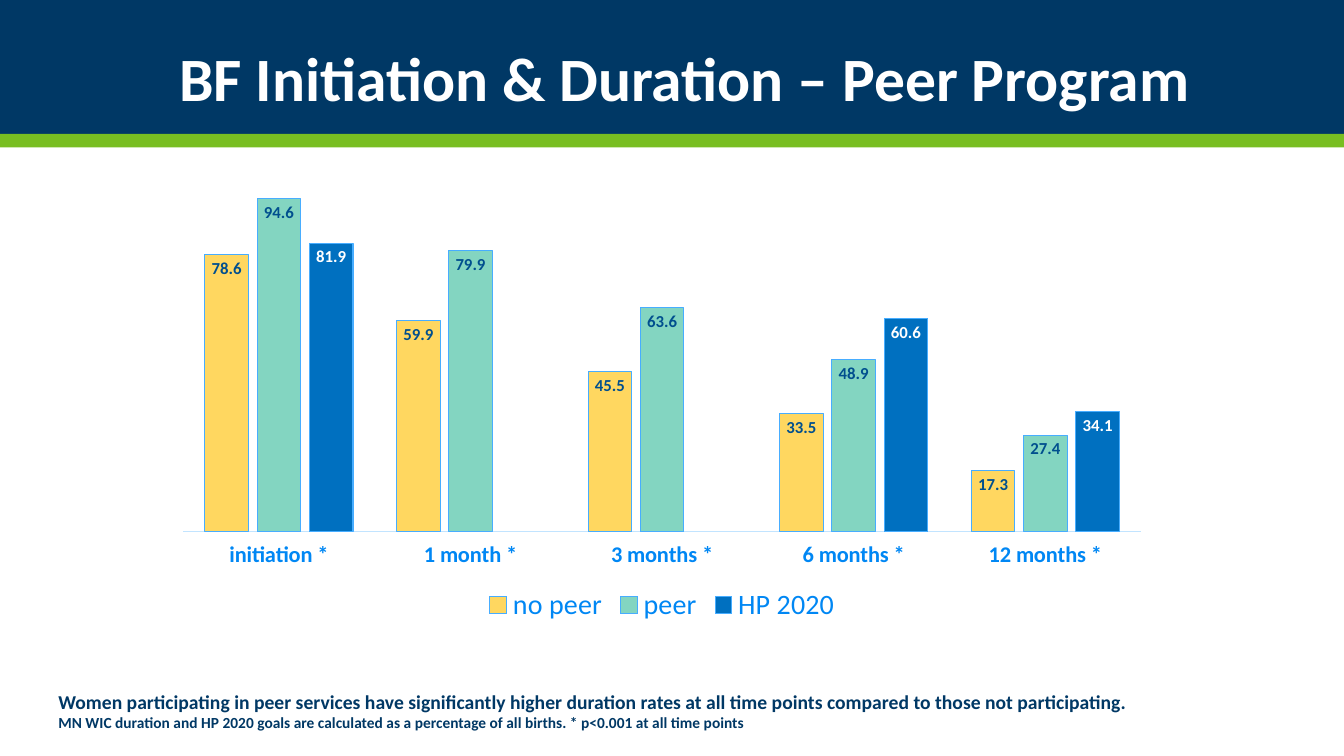
from lxml.etree import SubElement
from pptx import Presentation
from pptx.chart.data import CategoryChartData
from pptx.dml.color import RGBColor
from pptx.enum.chart import XL_CHART_TYPE, XL_LABEL_POSITION, XL_LEGEND_POSITION, XL_TICK_LABEL_POSITION, XL_TICK_MARK
from pptx.enum.shapes import MSO_SHAPE
from pptx.enum.text import MSO_ANCHOR, PP_ALIGN
from pptx.oxml.ns import qn
from pptx.util import Pt

NAVY = RGBColor(0x00, 0x38, 0x65)
GREEN = RGBColor(0x78, 0xBE, 0x21)
WHITE = RGBColor(0xFF, 0xFF, 0xFF)
SKY = RGBColor(0x00, 0x87, 0xF4)
PALE_SKY = RGBColor(0xC2, 0xE4, 0xFF)
BAR_EDGE = RGBColor(0x47, 0xAD, 0xFF)
LABEL_BLUE = RGBColor(0x00, 0x4F, 0x8E)
YELLOW = RGBColor(0xFF, 0xD7, 0x60)
TEAL = RGBColor(0x83, 0xD5, 0xC1)
BLUE = RGBColor(0x00, 0x70, 0xC0)
FONT = "Calibri"

PERIODS = ["initiation *", "1 month *", "3 months *", "6 months *", "12 months *"]
GROUPS = [
    ("no peer", [78.6, 59.9, 45.5, 33.5, 17.3], YELLOW, LABEL_BLUE),
    ("peer", [94.6, 79.9, 63.6, 48.9, 27.4], TEAL, LABEL_BLUE),
    ("HP 2020", [81.9, None, None, 60.6, 34.1], BLUE, WHITE),
]
FINDINGS = [
    ("Women participating in peer services have significantly higher duration rates "
     "at all time points compared to those not participating.", 14),
    ("MN WIC duration and HP 2020 goals are calculated as a percentage of all births. "
     "* p<0.001 at all time points", 11),
]


def style_font(font, size, color, bold=False):
    font.name = FONT
    font.size = Pt(size)
    font.bold = bold
    font.color.rgb = color


def add_band(slide, left, top, width, height, color):
    band = slide.shapes.add_shape(MSO_SHAPE.RECTANGLE, Pt(left), Pt(top), Pt(width), Pt(height))
    band.shadow.inherit = False
    band.fill.solid()
    band.fill.fore_color.rgb = color
    band.line.fill.background()


def add_header(slide, left, top, width, height):
    stripe = 9.6
    navy_height = height - stripe
    add_band(slide, left, top, width, navy_height, NAVY)
    add_band(slide, left, top + navy_height, width, stripe, GREEN)
    title = slide.shapes.add_textbox(
        Pt(left + 34.6), Pt(top + 21), Pt(width - 116), Pt(navy_height - 21))
    frame = title.text_frame
    frame.word_wrap = True
    frame.vertical_anchor = MSO_ANCHOR.MIDDLE
    frame.margin_right = Pt(28)
    frame.text = "BF Initiation & Duration – Peer Program"
    heading = frame.paragraphs[0]
    heading.alignment = PP_ALIGN.RIGHT
    heading.line_spacing = 0.9
    style_font(heading.runs[0].font, 44, WHITE, True)


def fix_plot_area(chart, x, y, w, h):
    plot_area = chart._chartSpace.chart.plotArea
    layout = plot_area.find(qn("c:layout"))
    if layout is None:
        layout = SubElement(plot_area, qn("c:layout"))
        plot_area.insert(0, layout)
    manual = SubElement(layout, qn("c:manualLayout"))
    settings = [("layoutTarget", "inner"), ("xMode", "edge"), ("yMode", "edge"),
                ("x", x), ("y", y), ("w", w), ("h", h)]
    for tag, value in settings:
        SubElement(manual, qn(f"c:{tag}")).set("val", str(value))


def add_rates_chart(slide, left, top, width, height):
    rates = CategoryChartData(number_format="0.0")
    rates.categories = PERIODS
    for name, values, _, _ in GROUPS:
        rates.add_series(name, values)
    chart = slide.shapes.add_chart(
        XL_CHART_TYPE.COLUMN_CLUSTERED, Pt(left), Pt(top), Pt(width), Pt(height), rates).chart
    chart.has_title = False
    style_font(chart.font, 10, NAVY)
    fix_plot_area(chart, 0.02, 0.02, 0.96, 0.77)

    chart.has_legend = True
    chart.legend.position = XL_LEGEND_POSITION.BOTTOM
    chart.legend.include_in_layout = False
    style_font(chart.legend.font, 20, SKY)

    periods = chart.category_axis
    periods.major_tick_mark = XL_TICK_MARK.NONE
    periods.tick_label_position = XL_TICK_LABEL_POSITION.LOW
    periods.format.line.color.rgb = PALE_SKY
    periods.format.line.width = Pt(0.75)
    style_font(periods.tick_labels.font, 16, SKY, True)

    percent = chart.value_axis
    percent.minimum_scale = 0
    percent.maximum_scale = 100
    percent.has_major_gridlines = False
    percent.visible = False

    plot = chart.plots[0]
    plot.gap_width = 100
    plot.overlap = -20
    plot.vary_by_categories = False
    for bars, (_, _, fill, label_color) in zip(plot.series, GROUPS):
        bars.format.fill.solid()
        bars.format.fill.fore_color.rgb = fill
        bars.format.line.color.rgb = BAR_EDGE
        bars.format.line.width = Pt(0.75)
        labels = bars.data_labels
        labels.show_value = True
        labels.position = XL_LABEL_POSITION.INSIDE_END
        labels.number_format = "0.0"
        labels.number_format_is_linked = False
        style_font(labels.font, 12, label_color, True)


def add_findings(slide, left, top, width, height):
    frame = slide.shapes.add_textbox(Pt(left), Pt(top), Pt(width), Pt(height)).text_frame
    frame.word_wrap = True
    frame.text = "\n".join(text for text, _ in FINDINGS)
    for paragraph, (_, size) in zip(frame.paragraphs, FINDINGS):
        style_font(paragraph.runs[0].font, size, NAVY, True)


def main():
    deck = Presentation()
    deck.slide_width = Pt(960)
    deck.slide_height = Pt(540)
    slide = deck.slides.add_slide(deck.slide_layouts[6])
    add_header(slide, 0, 0, 960, 105.2)
    add_rates_chart(slide, 116.6, 121.7, 712.8, 326.9)
    add_findings(slide, 34.6, 488.9, 849.6, 37.4)
    deck.save("out.pptx")


if __name__ == "__main__":
    main()
